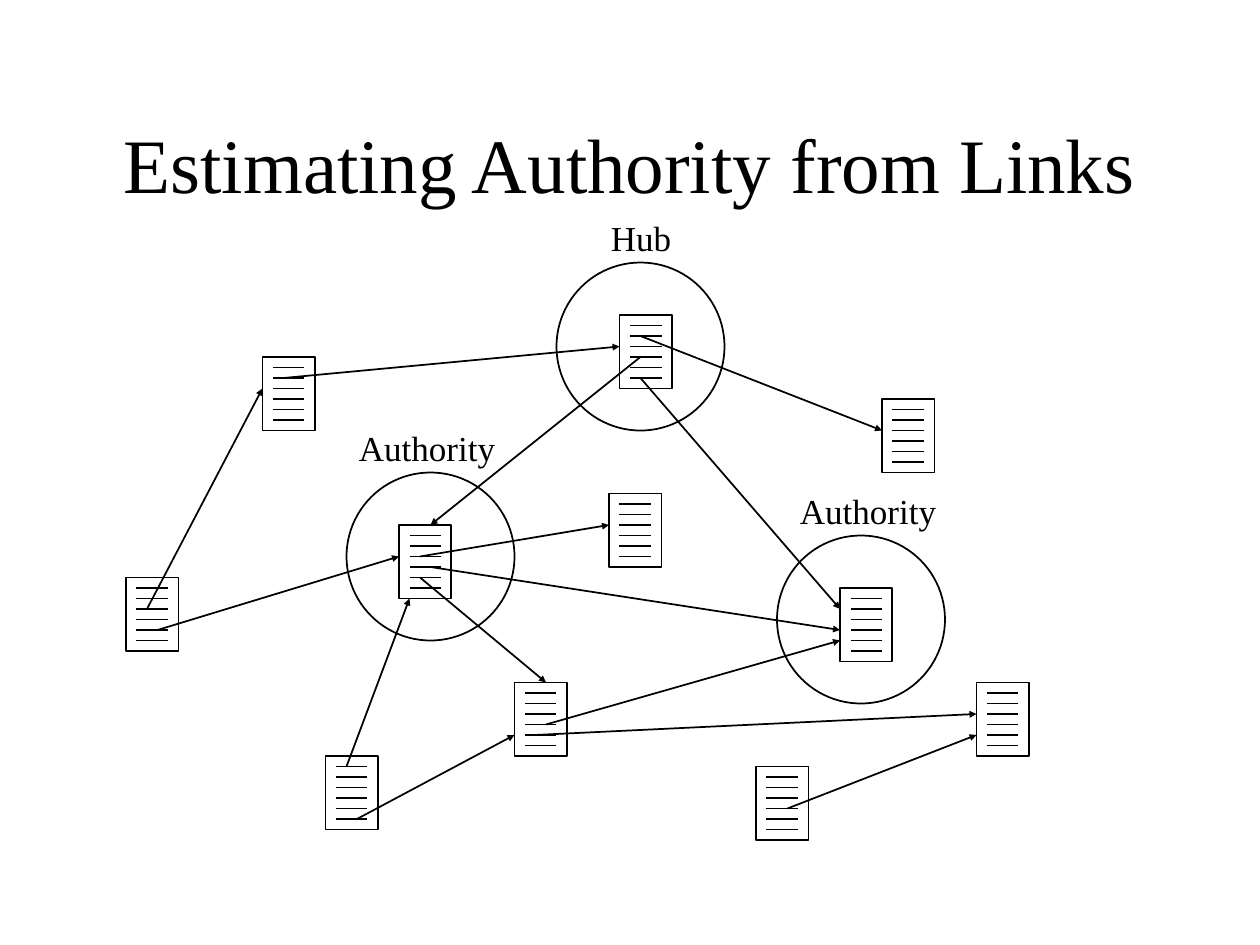
import pptx
import pptx.dml.color
import pptx.enum.shapes
import pptx.enum.text
import pptx.oxml
import pptx.oxml.ns
import pptx.util

Pt = pptx.util.Pt
SHAPES = pptx.enum.shapes.MSO_SHAPE
STRAIGHT = pptx.enum.shapes.MSO_CONNECTOR.STRAIGHT
ANCHOR = pptx.enum.text.MSO_ANCHOR
ALIGN = pptx.enum.text.PP_ALIGN
AUTO_SIZE = pptx.enum.text.MSO_AUTO_SIZE

TITLE = ("Estimating Authority from Links", (54, 48, 612, 90))

PAGES = {
    "west": (72, 330),
    "northwest": (150, 204),
    "centre": (348, 282),
    "southwest": (186, 432),
    "authority": (228, 300),
    "hub": (354, 180),
    "south": (294, 390),
    "northeast": (504, 228),
    "east": (558, 390),
    "second authority": (480, 336),
    "southeast": (432, 438),
}

LINKS = [
    ("west", (12, 18), "northwest", (0, 18)),
    ("northwest", (12, 12), "hub", (0, 18)),
    ("hub", (12, 24), "authority", (18, 0)),
    ("west", (18, 30), "authority", (0, 18)),
    ("authority", (12, 30), "south", (18, 0)),
    ("southwest", (18, 36), "south", (0, 30)),
    ("authority", (12, 18), "centre", (0, 18)),
    ("southwest", (12, 6), "authority", (6, 42)),
    ("authority", (18, 24), "second authority", (0, 24)),
    ("south", (18, 24), "second authority", (0, 30)),
    ("hub", (12, 36), "second authority", (0, 12)),
    ("hub", (12, 12), "northeast", (0, 18)),
    ("south", (12, 30), "east", (0, 18)),
    ("southeast", (18, 24), "east", (0, 30)),
]

RINGS = [(444, 306), (318, 150), (198, 270)]
LABELS = [
    ("Authority", (450, 276, 92.5, 31)),
    ("Authority", (198, 240, 92.5, 31)),
    ("Hub", (342, 120, 49, 31)),
]

PAGE_SIZE = (30, 42)
RING_SIZE = (96, 96)
TEXT_LINES = 6
LINE_GAP = 6

THEME = {
    "ink": {"rgb": pptx.dml.color.RGBColor(0, 0, 0)},
    "stroke": {"width": Pt(1)},
    "title": {"name": "Times New Roman", "size": Pt(44)},
    "label": {"name": "Times New Roman", "size": Pt(20)},
    "title frame": {"vertical_anchor": ANCHOR.MIDDLE, "word_wrap": True,
                    "auto_size": AUTO_SIZE.NONE},
    "label frame": {"word_wrap": False,
                    "auto_size": AUTO_SIZE.SHAPE_TO_FIT_TEXT},
}


def apply(target, values):
    for name, value in values.items():
        setattr(target, name, value)


def points(*lengths):
    return [Pt(length) for length in lengths]


def shift(corner, offset):
    return corner[0] + offset[0], corner[1] + offset[1]


def add_outline(shapes, kind, corner, size):
    outline = shapes.add_shape(kind, *points(*corner, *size))
    outline.shadow.inherit = False
    outline.fill.background()
    apply(outline.line, THEME["stroke"])
    apply(outline.line.color, THEME["ink"])


def add_line(shapes, start, end, arrow=False):
    line = shapes.add_connector(STRAIGHT, *points(*start, *end))
    apply(line.line, THEME["stroke"])
    apply(line.line.color, THEME["ink"])
    if arrow:
        line.line._get_or_add_ln().append(pptx.oxml.parse_xml(
            f'<a:tailEnd {pptx.oxml.ns.nsdecls("a")} '
            'type="triangle" w="sm" len="sm"/>'))
    line._element.spPr.append(pptx.oxml.parse_xml(
        f'<a:effectLst {pptx.oxml.ns.nsdecls("a")}/>'))


def add_page(shapes, corner):
    page = shapes.add_group_shape().shapes
    add_outline(page, SHAPES.RECTANGLE, corner, PAGE_SIZE)
    for row in range(1, TEXT_LINES + 1):
        start = shift(corner, (LINE_GAP, row * LINE_GAP))
        add_line(page, start, shift(start, (PAGE_SIZE[0] - 2 * LINE_GAP, 0)))


def write(box, words, role, align):
    apply(box.text_frame, THEME[role + " frame"])
    paragraph = box.text_frame.paragraphs[0]
    paragraph.alignment = align
    run = paragraph.add_run()
    run.text = words
    apply(run.font, THEME[role])
    apply(run.font.color, THEME["ink"])


def main():
    deck = pptx.Presentation()
    apply(deck, {"slide_width": Pt(720), "slide_height": Pt(540)})
    slide = deck.slides.add_slide(deck.slide_layouts[5])
    shapes = slide.shapes

    heading, place = TITLE
    apply(shapes.title, dict(zip(("left", "top", "width", "height"),
                                 points(*place))))
    write(shapes.title, heading, "title", ALIGN.CENTER)

    for corner in PAGES.values():
        add_page(shapes, corner)
    for source, leaving, target, arriving in LINKS:
        add_line(shapes, shift(PAGES[source], leaving),
                 shift(PAGES[target], arriving), arrow=True)
    for corner in RINGS:
        add_outline(shapes, SHAPES.OVAL, corner, RING_SIZE)
    for words, place in LABELS:
        write(shapes.add_textbox(*points(*place)), words, "label", ALIGN.LEFT)

    deck.save("out.pptx")


if __name__ == "__main__":
    main()
